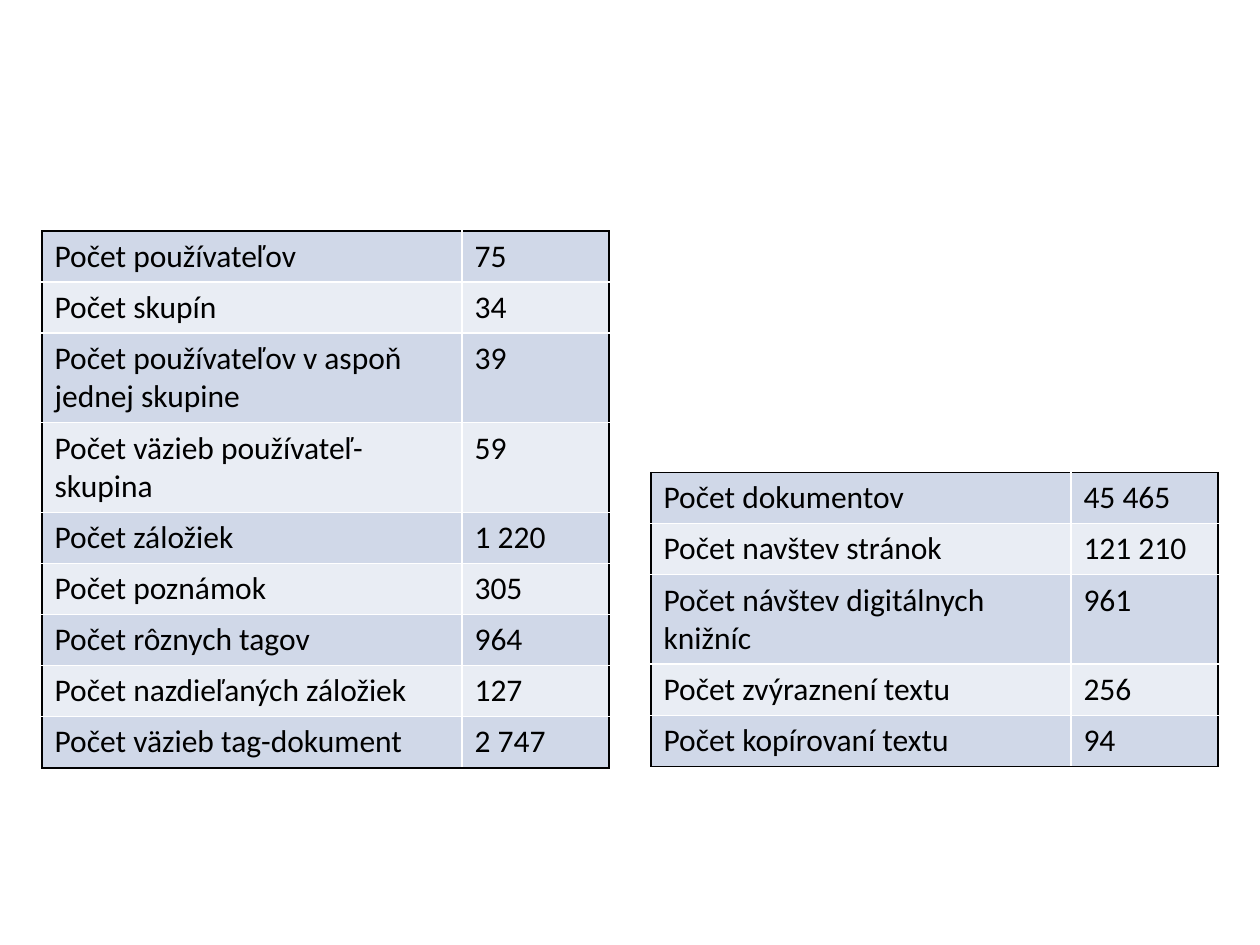
from lxml.etree import SubElement
from pptx import Presentation
from pptx.dml.color import RGBColor as Color
from pptx.oxml.ns import qn
from pptx.util import Pt

COLORS = {"frame": "000000", "grid": "FFFFFF", "text": "000000",
          "odd": "D0D8E8", "even": "E9EDF4"}
FONT, FONT_SIZE = "Calibri", 18
COLUMN_WIDTHS = (240, 84)
ROW_HEIGHT = 29.2

USER_COUNTS = [
    ("Počet používateľov", "75"),
    ("Počet skupín", "34"),
    ("Počet používateľov v aspoň jednej skupine", "39"),
    ("Počet väzieb používateľ-skupina", "59"),
    ("Počet záložiek", "1 220"),
    ("Počet poznámok", "305"),
    ("Počet rôznych tagov", "964"),
    ("Počet nazdieľaných záložiek", "127"),
    ("Počet väzieb tag-dokument", "2 747"),
]
DOCUMENT_COUNTS = [
    ("Počet dokumentov", "45 465"),
    ("Počet navštev stránok", "121 210"),
    ("Počet návštev digitálnych knižníc", "961"),
    ("Počet zvýraznení textu", "256"),
    ("Počet kopírovaní textu", "94"),
]


def set_borders(cell, outer_sides):
    """Draw dark lines on the outer sides and light lines on the others."""
    properties = cell._tc.get_or_add_tcPr()
    for side in "LRTB":
        line = SubElement(properties, qn(f"a:ln{side}"), w=str(Pt(1)))
        fill = SubElement(line, qn("a:solidFill"))
        color = COLORS["frame" if side in outer_sides else "grid"]
        SubElement(fill, qn("a:srgbClr"), val=color)


def format_cell(cell, text, fill, outer_sides):
    # Borders come before the fill in the cell properties
    set_borders(cell, outer_sides)
    cell.fill.solid()
    cell.fill.fore_color.rgb = Color.from_string(COLORS[fill])
    cell.text_frame.text = text
    font = cell.text_frame.paragraphs[0].runs[0].font
    font.name, font.size = FONT, Pt(FONT_SIZE)
    font.color.rgb = Color.from_string(COLORS["text"])


def add_count_table(slide, left, top, counts):
    table = slide.shapes.add_table(
        len(counts), len(COLUMN_WIDTHS), Pt(left), Pt(top),
        Pt(sum(COLUMN_WIDTHS)), Pt(ROW_HEIGHT * len(counts))).table
    table.first_row = False
    for column, width in zip(table.columns, COLUMN_WIDTHS):
        column.width = Pt(width)
    for row_index, row in enumerate(counts):
        table.rows[row_index].height = Pt(ROW_HEIGHT)
        row_sides = "T" * (row_index == 0) + "B" * (row_index == len(counts) - 1)
        for column_index, text in enumerate(row):
            format_cell(table.cell(row_index, column_index), text,
                        "even" if row_index % 2 else "odd",
                        row_sides + "LR"[column_index])


def main():
    presentation = Presentation()
    presentation.slide_width, presentation.slide_height = Pt(720), Pt(540)
    slide = presentation.slides.add_slide(presentation.slide_layouts[6])

    # Users and groups on the left, documents on the right
    add_count_table(slide, 24, 132, USER_COUNTS)
    add_count_table(slide, 372, 270, DOCUMENT_COUNTS)

    presentation.save("out.pptx")


if __name__ == "__main__":
    main()
